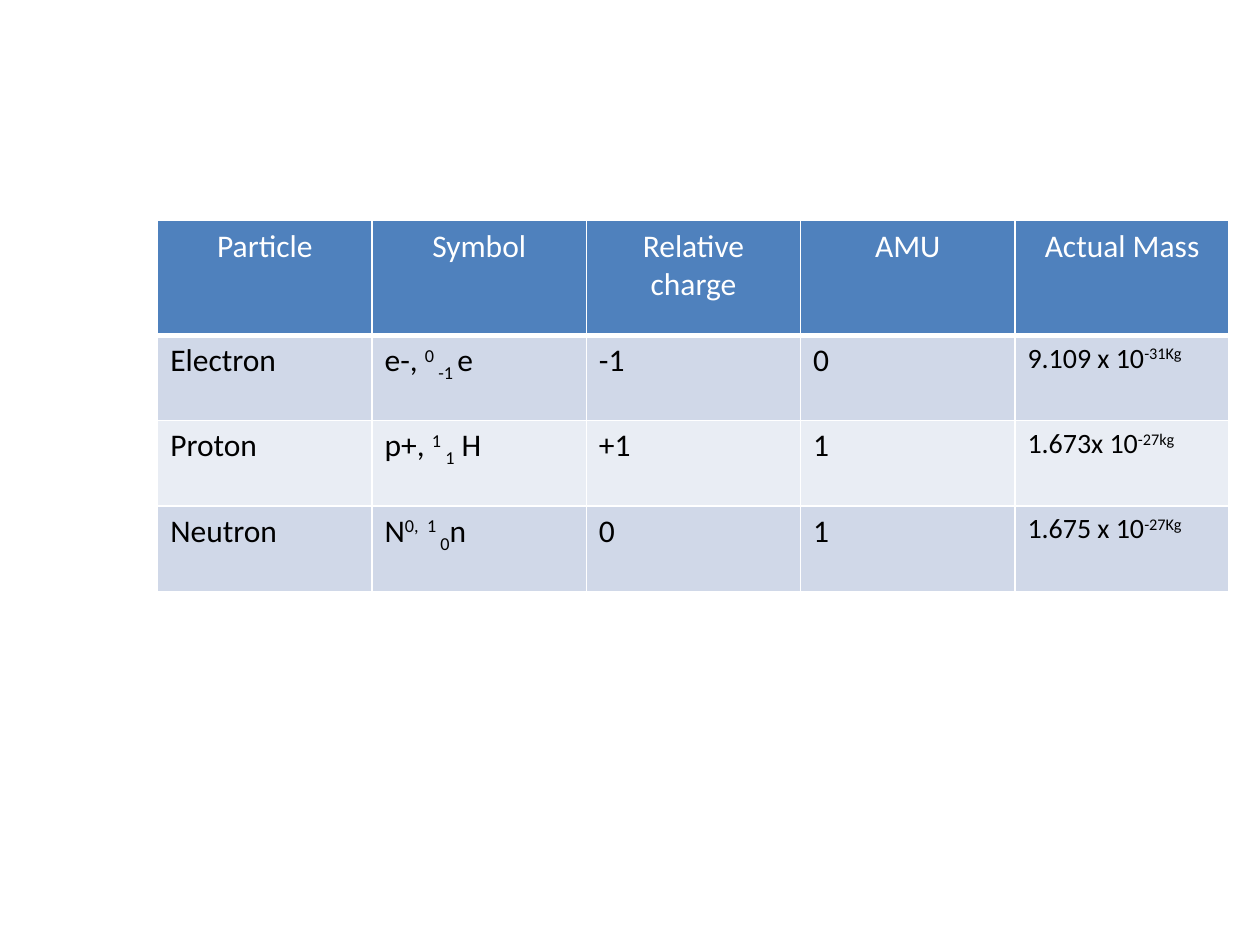
"""Build a slide with a table of the subatomic particles."""
import lxml.etree
import pptx
import pptx.dml.color
import pptx.enum.text
import pptx.oxml.ns
import pptx.util
from pptx.util import Cm

SUPER, SUB = 30, -25
HEADINGS = ["Particle", "Symbol", "Relative charge", "AMU", "Actual Mass"]
PARTICLES = [
    ["Electron", [("e-, ", 0), ("0 ", SUPER), ("-1 ", SUB), ("e", 0)],
     "-1", "0", [("9.109 x 10", 0), ("-31Kg", SUPER)]],
    ["Proton", [("p+, ", 0), ("1 ", SUPER), ("1", SUB), (" H", 0)],
     "+1", "1", [("1.673x 10", 0), ("-27kg", SUPER)]],
    ["Neutron", [("N", 0), ("0,  1 ", SUPER), ("0", SUB), ("n", 0)],
     "0", "1", [("1.675 x 10", 0), ("-27Kg", SUPER)]],
]
HEADER_BORDERS = {"lnL": 1, "lnR": 1, "lnT": 1, "lnB": 3}


def color(value):
    return pptx.dml.color.RGBColor.from_string(value)


def add_border(cell, side, points):
    qn = pptx.oxml.ns.qn
    line = lxml.etree.SubElement(cell._tc.get_or_add_tcPr(), qn(f"a:{side}"),
                                 w=str(pptx.util.Pt(points)))
    fill = lxml.etree.SubElement(line, qn("a:solidFill"))
    lxml.etree.SubElement(fill, qn("a:srgbClr"), val="FFFFFF")


presentation = pptx.Presentation()
presentation.slide_width = Cm(25.4)
presentation.slide_height = Cm(19.05)
slide = presentation.slides.add_slide(presentation.slide_layouts[6])

particles = slide.shapes.add_table(
    len(PARTICLES) + 1, len(HEADINGS), Cm(3.18), Cm(4.45), Cm(21.6), Cm(7.47)).table
for column in particles.columns:
    column.width = Cm(4.32)
for index, row in enumerate(particles.rows):
    row.height = Cm(1.72 if index else 2.31)

for row_index, contents in enumerate([HEADINGS] + PARTICLES):
    is_header = row_index == 0
    background = "4F81BD" if is_header else "D0D8E8" if row_index % 2 else "E9EDF4"
    for column_index, content in enumerate(contents):
        cell = particles.cell(row_index, column_index)
        if is_header:
            for side, points in HEADER_BORDERS.items():
                add_border(cell, side, points)
        cell.fill.solid()
        cell.fill.fore_color.rgb = color(background)

        paragraph = cell.text_frame.paragraphs[0]
        is_mass = column_index == len(HEADINGS) - 1 and not is_header
        paragraph.font.name = "Calibri"
        paragraph.font.size = pptx.util.Pt(16 if is_mass else 18)
        paragraph.font.bold = False
        paragraph.font.color.rgb = color("FFFFFF" if is_header else "000000")
        if is_header:
            paragraph.alignment = pptx.enum.text.PP_ALIGN.CENTER
        for text, baseline in [(content, 0)] if isinstance(content, str) else content:
            run = paragraph.add_run()
            run.text = text
            if baseline:
                run._r.get_or_add_rPr().set("baseline", str(baseline * 1000))

presentation.save("out.pptx")
